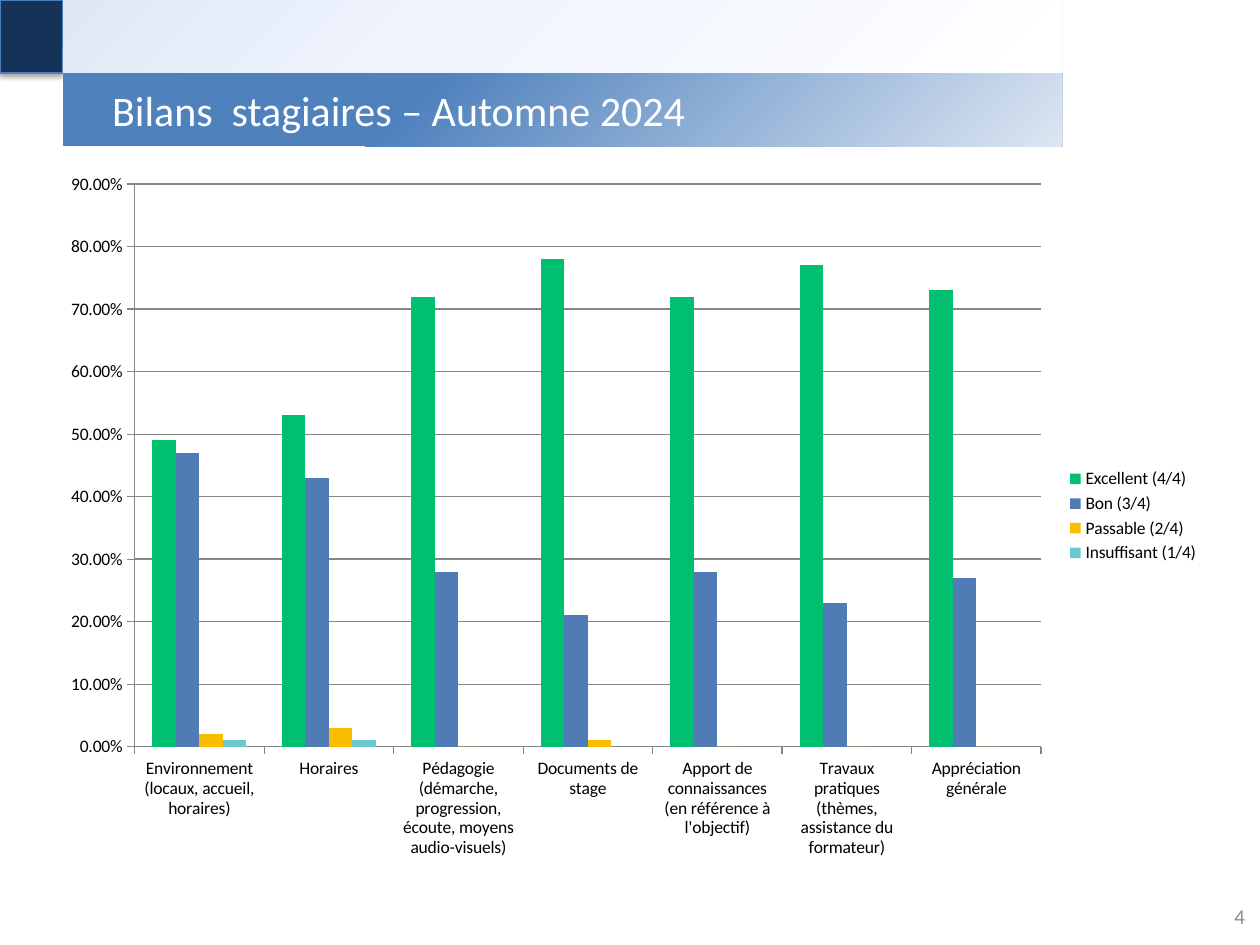
import pptx
import pptx.chart.data
import pptx.dml.color
import pptx.enum.chart
import pptx.enum.shapes
import pptx.enum.text
import pptx.oxml
import pptx.oxml.ns
import pptx.util

Inches, Pt = pptx.util.Inches, pptx.util.Pt
NS = pptx.oxml.ns.nsdecls("a")
CATEGORIES = [
    "Environnement (locaux, accueil, horaires)",
    "Horaires",
    "Pédagogie (démarche, progression, écoute, moyens audio-visuels)",
    "Documents de stage",
    "Apport de connaissances (en référence à l'objectif)",
    "Travaux pratiques (thèmes, assistance du formateur)",
    "Appréciation générale",
]
SERIES = [
    ("Excellent (4/4)", "00BF6F", (0.49, 0.53, 0.72, 0.78, 0.72, 0.77, 0.73)),
    ("Bon (3/4)", "507CB6", (0.47, 0.43, 0.28, 0.21, 0.28, 0.23, 0.27)),
    ("Passable (2/4)", "F9BE00", (0.02, 0.03, 0, 0.01, 0, 0, 0)),
    ("Insuffisant (1/4)", "6BC8CD", (0.01, 0.01, 0, 0, 0, 0, 0)),
]


def rgb(value):
    """Turn a hex string into a colour."""
    return pptx.dml.color.RGBColor.from_string(value)


def style_font(font, size, color):
    """Set the typeface, size and colour of a font."""
    font.name = "Calibri"
    font.size = Pt(size)
    font.color.rgb = rgb(color)


def add_box(s, box):
    """Add a rectangle without line or shadow."""
    sp = s.shapes.add_shape(pptx.enum.shapes.MSO_SHAPE.RECTANGLE, *map(Inches, box))
    sp.shadow.inherit = False
    sp.line.fill.background()
    return sp


def add_gradient_box(s, box, stops):
    """Add a rectangle with a diagonal gradient of (position, colour) stops."""
    sp = add_box(s, box)
    gs = "".join(f'<a:gs pos="{pos * 1000}"><a:srgbClr val="{color}"/></a:gs>' for pos, color in stops)
    fill = f'<a:gradFill {NS} rotWithShape="1"><a:gsLst>{gs}</a:gsLst><a:lin ang="2700000" scaled="0"/></a:gradFill>'
    sp._element.spPr.find(pptx.oxml.ns.qn("a:prstGeom")).addnext(pptx.oxml.parse_xml(fill))
    return sp


def add_corner(s, box):
    """Add the dark corner square with its soft shadow."""
    sp = add_box(s, box)
    sp.fill.solid()
    sp.fill.fore_color.rgb = rgb("153258")
    sp.line.color.rgb = rgb("4B7EBC")
    sp.line.width = Pt(0.75)
    shadow = (f'<a:outerShdw {NS} blurRad="{Pt(3.1)}" dist="{Pt(1.8)}" dir="5400000" rotWithShape="0">'
              '<a:srgbClr val="000000"><a:alpha val="35000"/></a:srgbClr></a:outerShdw>')
    sp._element.spPr.find(pptx.oxml.ns.qn("a:effectLst")).append(pptx.oxml.parse_xml(shadow))


def add_title(s, box, text):
    """Add the title banner."""
    sp = add_gradient_box(s, box, [(0, "4F81BD"), (35, "4F81BD"), (100, "DCE6F2")])
    tf = sp.text_frame
    tf.text = text
    tf.word_wrap = True
    tf.vertical_anchor = pptx.enum.text.MSO_ANCHOR.MIDDLE
    tf.margin_left = Inches(0.39)
    p = tf.paragraphs[0]
    p.alignment = pptx.enum.text.PP_ALIGN.LEFT
    style_font(p.runs[0].font, 24, "FFFFFF")


def add_page_number(s, box, number):
    """Add the page number, aligned right."""
    tf = s.shapes.add_textbox(*map(Inches, box)).text_frame
    tf.text = number
    tf.word_wrap = True
    tf.vertical_anchor = pptx.enum.text.MSO_ANCHOR.MIDDLE
    p = tf.paragraphs[0]
    p.alignment = pptx.enum.text.PP_ALIGN.RIGHT
    p.space_after = Pt(6)
    style_font(p.runs[0].font, 12, "8C8C8C")


def add_ratings_chart(s, box):
    """Add the clustered columns of ratings by criterion."""
    data = pptx.chart.data.CategoryChartData(number_format="0.00%")
    data.categories = CATEGORIES
    for name, _, values in SERIES:
        data.add_series(name, values)
    kind = pptx.enum.chart.XL_CHART_TYPE.COLUMN_CLUSTERED
    chart = s.shapes.add_chart(kind, *map(Inches, box), data).chart
    style_font(chart.font, 10, "000000")
    chart.has_title = False
    chart.has_legend = True
    chart.legend.position = pptx.enum.chart.XL_LEGEND_POSITION.RIGHT
    chart.legend.include_in_layout = False
    plot = chart.plots[0]
    plot.gap_width = 150
    plot.overlap = 0
    plot.vary_by_categories = False
    for series, (_, color, _) in zip(plot.series, SERIES):
        series.format.fill.solid()
        series.format.fill.fore_color.rgb = rgb(color)
        series.invert_if_negative = False
    value_axis = chart.value_axis
    value_axis.minimum_scale, value_axis.maximum_scale, value_axis.major_unit = 0, 0.9, 0.1
    value_axis.has_major_gridlines = True
    value_axis.tick_labels.number_format = "0.00%"
    value_axis.tick_labels.number_format_is_linked = False
    for axis in (chart.category_axis, value_axis):
        axis.major_tick_mark = pptx.enum.chart.XL_TICK_MARK.OUTSIDE
    for part in (chart.category_axis, value_axis, value_axis.major_gridlines):
        part.format.line.color.rgb = rgb("868686")
        part.format.line.width = Pt(0.75)


def main():
    """Build the slide and save it."""
    prs = pptx.Presentation()
    prs.slide_width, prs.slide_height = Inches(10), Inches(7.5)
    s = prs.slides.add_slide(prs.slide_layouts[6])
    edge, band, width = 0.5, 0.58, 7.93
    add_corner(s, (0, 0, edge, band))
    add_gradient_box(s, (edge, 0, width, band), [(0, "DEE9F5"), (40, "F0F4FE"), (100, "FFFFFF")])
    add_title(s, (edge, band, width, band), "Bilans  stagiaires – Automne 2024")
    add_page_number(s, (9.5, 7.07, 0.48, 0.4), "4")
    add_ratings_chart(s, (0.38, 1.27, 9.24, 5.65))
    prs.save("out.pptx")


if __name__ == "__main__":
    main()
